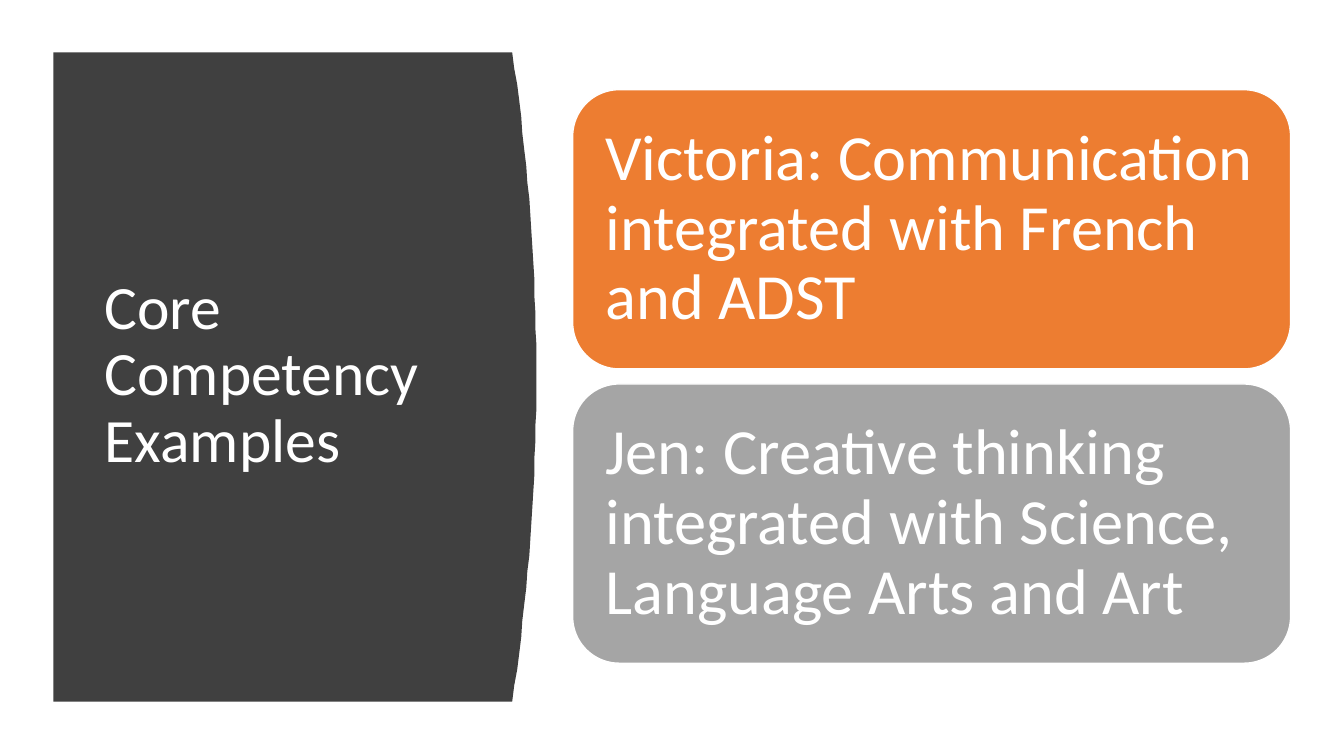
import pptx
import pptx.util
import pptx.dml.color
import pptx.enum.shapes
import pptx.enum.text

HUES = {"panel": "404040", "orange": "ED7D31", "gray": "A5A5A5", "white": "FFFFFF"}


class Deck:
    """Holds the style and the current slide, and draws each kind of element."""

    scale = 9144
    font = "Calibri"

    def __init__(self):
        self.file = pptx.Presentation()
        self.file.slide_width = self.px(1333)
        self.file.slide_height = self.px(750)
        self.slide = self.file.slides.add_slide(self.file.slide_layouts[6])

    def px(self, size):
        return pptx.util.Emu(size * self.scale)

    def hue(self, name):
        return pptx.dml.color.RGBColor.from_string(HUES[name])

    def paint(self, shape, fill, line=None):
        shape.shadow.inherit = False
        shape.fill.solid()
        shape.fill.fore_color.rgb = self.hue(fill)
        if line:
            shape.line.color.rgb = self.hue(line)
            shape.line.width = pptx.util.Pt(1)
        else:
            shape.line.fill.background()

    def label(self, shape, words, size, side, edge):
        frame = shape.text_frame
        frame.word_wrap = True
        frame.vertical_anchor = pptx.enum.text.MSO_ANCHOR.MIDDLE
        frame.margin_left = frame.margin_right = self.px(side)
        frame.margin_top = frame.margin_bottom = self.px(edge)
        para = frame.paragraphs[0]
        para.alignment = pptx.enum.text.PP_ALIGN.LEFT
        para.line_spacing = 0.9
        run = para.add_run()
        run.text = words
        run.font.name = self.font
        run.font.size = pptx.util.Pt(size)
        run.font.color.rgb = self.hue("white")

    def panel(self, left, top, width, height, bulge, steps=40):
        right = left + width
        curve = []
        for step in range(steps + 1):
            part = step / steps
            curve.append((right + bulge * 4 * part * (1 - part), top + height * part))
        pen = self.slide.shapes.build_freeform(left, top, scale=self.scale)
        pen.add_line_segments(curve + [(left, top + height)], close=True)
        self.paint(pen.convert_to_shape(), "panel")

    def title(self, words, *box):
        shape = self.slide.shapes.add_textbox(*map(self.px, box))
        self.label(shape, words, 44, 10, 5)

    def card(self, words, fill, *box):
        kind = pptx.enum.shapes.MSO_SHAPE.ROUNDED_RECTANGLE
        shape = self.slide.shapes.add_shape(kind, *map(self.px, box))
        self.paint(shape, fill, "white")
        self.label(shape, words, 46, 19, 19)


def main():
    deck = Deck()
    deck.panel(53, 52, 455, 644, 24)
    deck.title("Core Competency Examples", 94, 111, 374, 524)
    cards = [
        ("Victoria: Communication integrated with French and ADST", "orange"),
        ("Jen: Creative thinking integrated with Science, Language Arts and Art", "gray"),
    ]
    for row, (words, fill) in enumerate(cards):
        deck.card(words, fill, 568, 89 + row * 292, 712, 277)
    deck.file.save("out.pptx")


if __name__ == "__main__":
    main()
